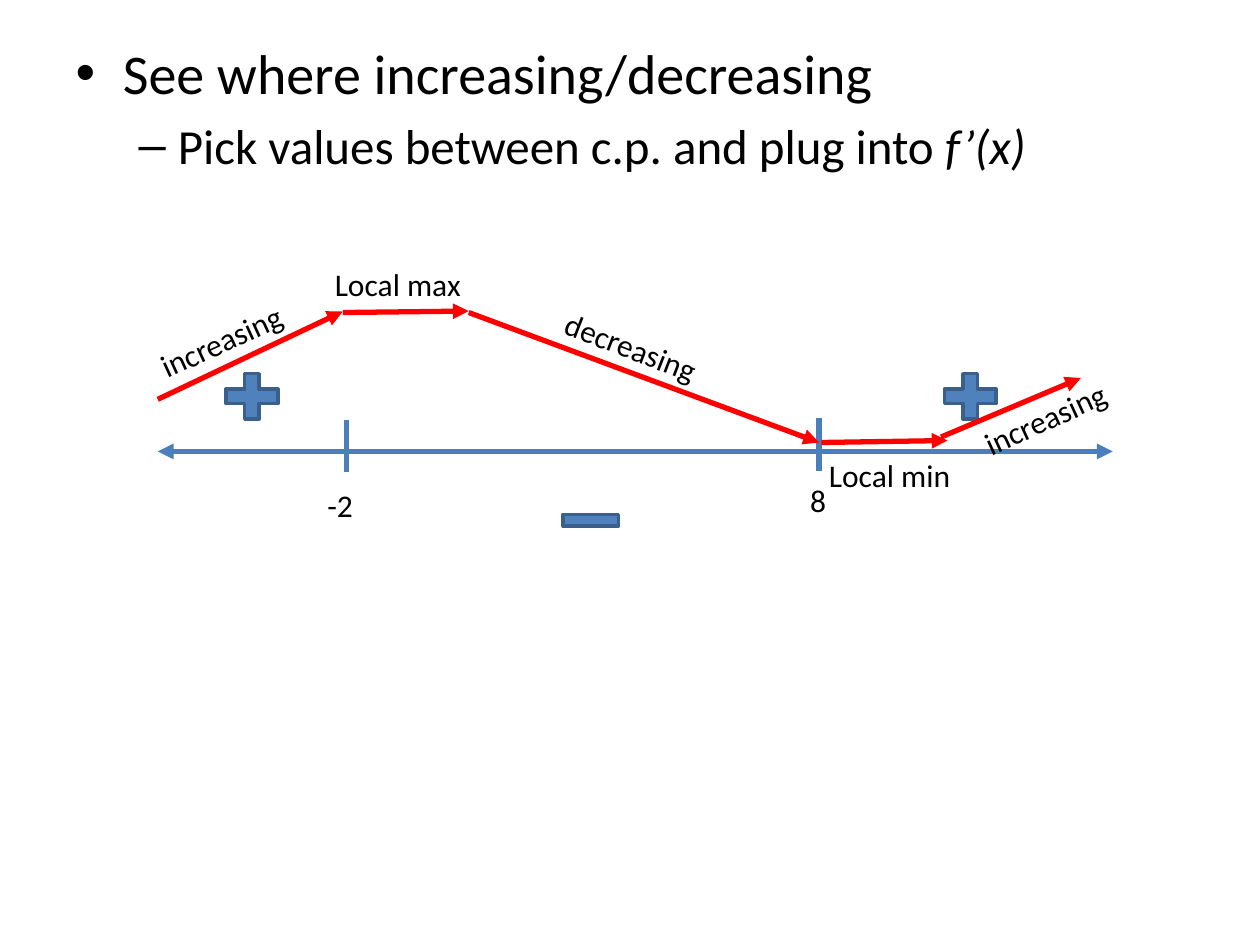
"""Build a slide showing where a function increases and decreases on a sign line."""
from lxml.etree import SubElement
from pptx import Presentation
from pptx.dml.color import RGBColor
from pptx.enum.shapes import MSO_CONNECTOR, MSO_SHAPE
from pptx.enum.text import MSO_AUTO_SIZE
from pptx.oxml.ns import qn
from pptx.util import Cm, Pt

COLORS = {
    "text": "000000",
    "axis": "4B7EBC",
    "trend": "FF0000",
    "sign": "4F81BD",
    "sign_outline": "3A5F8C",
}
FONT = "Calibri"
LABEL_HEIGHT = 1.07


def color(name):
    return RGBColor.from_string(COLORS[name])


def apply_format(target, values):
    for attribute, value in values.items():
        setattr(target, attribute, value)


def place(shape, left, top, width, height):
    bounds = {"left": left, "top": top, "width": width, "height": height}
    apply_format(shape, {side: Cm(length) for side, length in bounds.items()})


def add_run(paragraph, text, size, italic=None):
    run = paragraph.add_run()
    run.text = text
    apply_format(run.font, {"name": FONT, "size": Pt(size), "italic": italic})
    run.font.color.rgb = color("text")


def fill_body(slide):
    title = slide.shapes.title
    title.element.getparent().remove(title.element)
    body = slide.placeholders[1]
    place(body, 1.27, 0.64, 22.86, 16.38)
    frame = body.text_frame
    add_run(frame.paragraphs[0], "See where increasing/decreasing", 32)
    detail = frame.add_paragraph()
    detail.level = 1
    add_run(detail, "Pick values between c.p. and plug into ", 28)
    add_run(detail, "f’(x)", 28, italic=True)


def add_line(slide, start, end, color_name, arrow_ends=()):
    points = [Cm(length) for length in (*start, *end)]
    connector = slide.shapes.add_connector(MSO_CONNECTOR.STRAIGHT, *points)
    connector.line.width = Pt(3)
    connector.line.color.rgb = color(color_name)
    outline = connector.line._get_or_add_ln()
    for arrow_end in arrow_ends:
        SubElement(outline, qn(f"a:{arrow_end}"), type="triangle")
    SubElement(connector.element.spPr, qn("a:effectLst"))


def add_sign(slide, preset, left, top, width, height):
    bounds = [Cm(length) for length in (left, top, width, height)]
    shape = slide.shapes.add_shape(preset, *bounds)
    shape.shadow.inherit = False
    shape.fill.solid()
    shape.fill.fore_color.rgb = color("sign")
    shape.line.color.rgb = color("sign_outline")
    shape.line.width = Pt(2)


def add_label(slide, text, left, top, width=3.38, rotation=0):
    bounds = [Cm(length) for length in (left, top, width, LABEL_HEIGHT)]
    box = slide.shapes.add_textbox(*bounds)
    box.rotation = rotation
    frame = box.text_frame
    apply_format(frame, {"word_wrap": True, "auto_size": MSO_AUTO_SIZE.SHAPE_TO_FIT_TEXT})
    add_run(frame.paragraphs[0], text, 18)


def add_number_line(slide):
    add_line(slide, (3.18, 9.1), (22.43, 9.1), "axis", ("headEnd", "tailEnd"))
    for center, top in ((6.99, 8.46), (16.51, 8.43)):
        add_line(slide, (center, top), (center, top + 1.06), "axis")
    add_label(slide, "-2", 6.35, 9.68, width=1.47)
    add_label(slide, "8", 16.08, 9.58, width=1.9)


def add_signs(slide):
    for left in (4.37, 18.85):
        add_sign(slide, MSO_SHAPE.MATH_PLUS, left, 7.37, 1.42, 1.24)
    add_sign(slide, MSO_SHAPE.MATH_MINUS, 11.15, 9.98, 1.52, 1.02)


def add_trends(slide):
    arrows = [
        ((3.18, 8.05), (6.91, 6.28)),
        ((9.45, 6.3), (16.51, 8.92)),
        ((18.97, 8.81), (21.79, 7.62)),
        ((6.91, 6.3), (9.45, 6.27)),
        ((16.56, 8.92), (19.1, 8.88)),
    ]
    for start, end in arrows:
        add_line(slide, start, end, "trend", ("tailEnd",))
    labels = [
        ("increasing", 2.9, 6.3, 335.4),
        ("increasing", 19.51, 7.87, 335.4),
        ("Local max", 6.5, 5.21, 0),
        ("Local min", 16.46, 9.07, 0),
        ("decreasing", 11.07, 6.5, 21.3),
    ]
    for text, left, top, rotation in labels:
        add_label(slide, text, left, top, rotation=rotation)


def main():
    presentation = Presentation()
    apply_format(presentation, {"slide_width": Cm(25.4), "slide_height": Cm(19.05)})
    slide = presentation.slides.add_slide(presentation.slide_layouts[1])
    fill_body(slide)
    add_number_line(slide)
    add_signs(slide)
    add_trends(slide)
    presentation.save("out.pptx")


if __name__ == "__main__":
    main()
